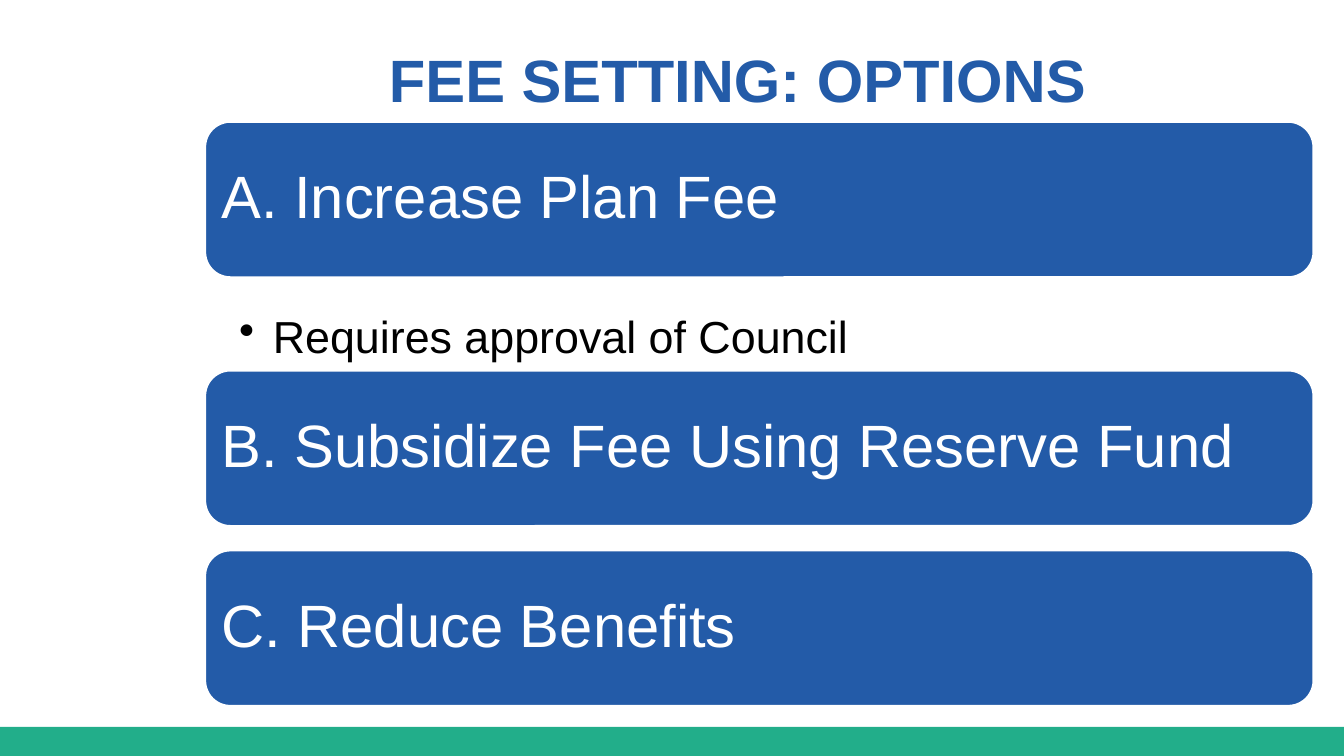
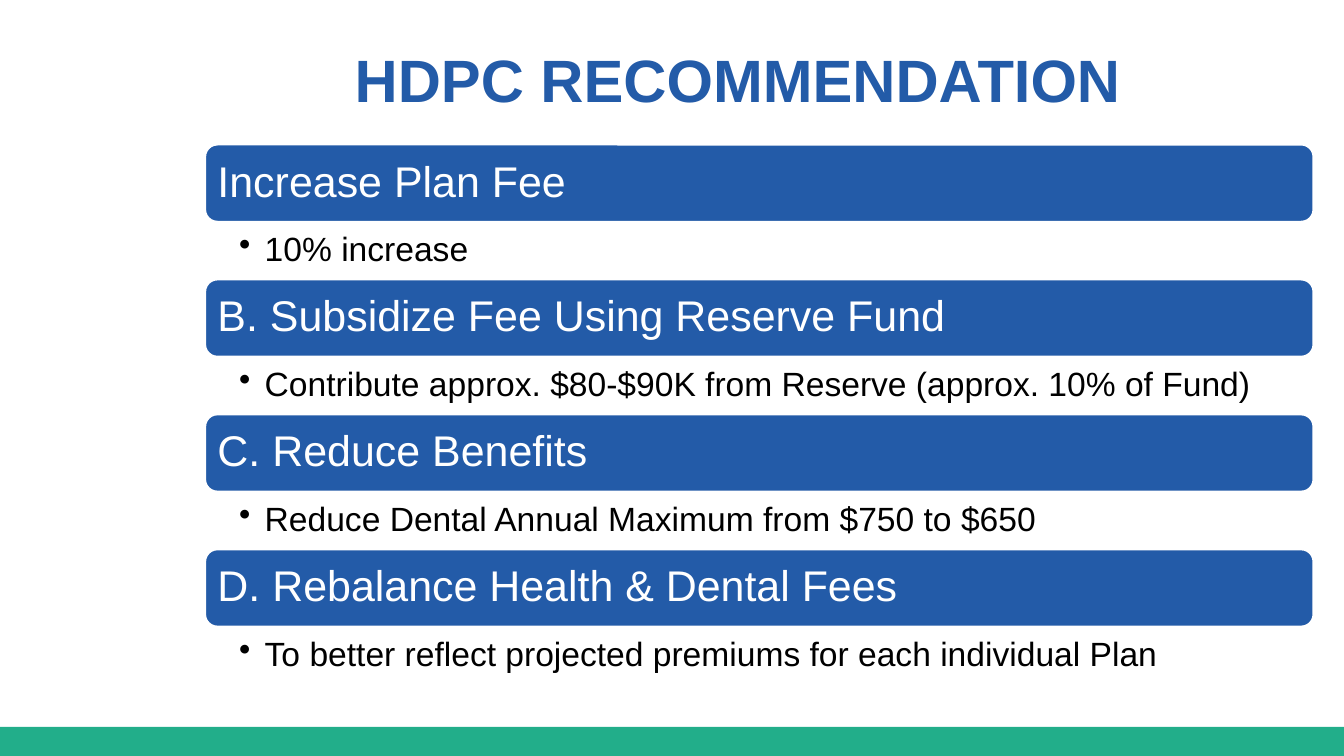
"""Builds two slides on plan fee options and the resulting recommendation."""
import pptx
import pptx.util
import pptx.dml.color
import pptx.enum.shapes
import pptx.enum.text
import pptx.oxml.ns
import lxml.etree

COLORS = {"blue": "235BA8", "green": "22AE8A", "white": "FFFFFF", "black": "000000"}
SHAPE = pptx.enum.shapes.MSO_SHAPE
ANCHOR = pptx.enum.text.MSO_ANCHOR
ALIGN = pptx.enum.text.PP_ALIGN

prs = pptx.Presentation()
prs.slide_width = pptx.util.Inches(10)
prs.slide_height = pptx.util.Inches(5.625)
COL = prs.slide_width / 100
ROW = prs.slide_height / 100


def add_box(s, kind, left, top, width, height, fill=None, line=None):
    """Adds a shape, or a text box if kind is None, on a grid of 100 by 100."""
    at = [int(left * COL), int(top * ROW), int(width * COL), int(height * ROW)]
    if kind is None:
        return s.shapes.add_textbox(*at)
    sp = s.shapes.add_shape(kind, *at)
    sp.shadow.inherit = False
    sp.fill.solid()
    sp.fill.fore_color.rgb = pptx.dml.color.RGBColor.from_string(COLORS[fill])
    if line:
        sp.line.color.rgb = pptx.dml.color.RGBColor.from_string(COLORS[line])
        sp.line.width = pptx.util.Pt(2)
    else:
        sp.line.fill.background()
    return sp


def write(sp, text, color, insets, anchor, spacing, size, bold=False, align=ALIGN.LEFT, indent=0):
    """Writes one paragraph, with a bullet if it has an indent."""
    tf = sp.text_frame
    frame = {"word_wrap": True, "vertical_anchor": anchor}
    sides = ("margin_left", "margin_top", "margin_right", "margin_bottom")
    frame.update(zip(sides, map(pptx.util.Inches, insets)))
    for name, value in frame.items():
        setattr(tf, name, value)
    p = tf.paragraphs[0]
    if indent:
        pPr = p._p.get_or_add_pPr()
        pPr.set("marL", str(pptx.util.Inches(indent)))
        pPr.set("indent", str(-pptx.util.Inches(indent)))
        bullet = lxml.etree.SubElement(pPr, pptx.oxml.ns.qn("a:buChar"))
        bullet.set("char", "•")
    p.alignment = align
    p.line_spacing = spacing
    r = p.add_run()
    r.text = text
    for name, value in {"name": "Arial", "size": pptx.util.Pt(size), "bold": bold}.items():
        setattr(r.font, name, value)
    r.font.color.rgb = pptx.dml.color.RGBColor.from_string(COLORS[color])


slides = [
    {
        "title": "FEE SETTING: OPTIONS",
        "top": 16, "bar": 20.8, "note": 12.1, "gap": 3,
        "bar_size": 32,
        "note_format": {"size": 24, "indent": 0.25, "spacing": 1.5, "anchor": ANCHOR.TOP},
        "items": [
            ("A. Increase Plan Fee", "Requires approval of Council"),
            ("B. Subsidize Fee Using Reserve Fund", None),
            ("C. Reduce Benefits", None),
        ],
    },
    {
        "title": "HDPC RECOMMENDATION",
        "top": 19, "bar": 10.45, "note": 7.4, "gap": 0,
        "bar_size": 23,
        "note_format": {"size": 18, "indent": 0.19, "spacing": 0.9, "anchor": ANCHOR.MIDDLE},
        "items": [
            ("Increase Plan Fee", "10% increase"),
            ("B. Subsidize Fee Using Reserve Fund",
             "Contribute approx. $80-$90K from Reserve (approx. 10% of Fund)"),
            ("C. Reduce Benefits", "Reduce Dental Annual Maximum from $750 to $650"),
            ("D. Rebalance Health & Dental Fees",
             "To better reflect projected premiums for each individual Plan"),
        ],
    },
]

for slide in slides:
    s = prs.slides.add_slide(prs.slide_layouts[6])
    add_box(s, SHAPE.RECTANGLE, 0, 96.15, 100, 3.85, "green")
    sp = add_box(s, None, 9.8, -6.6, 90.2, 21.7)
    write(sp, slide["title"], "blue", [0] * 4, ANCHOR.BOTTOM, 0.8, 32, True, ALIGN.CENTER)
    top = slide["top"]
    for heading, note in slide["items"]:
        sp = add_box(s, SHAPE.ROUNDED_RECTANGLE, 15.2, top, 82.6, slide["bar"], "blue", "white")
        write(sp, heading, "white", [0.07] * 4, ANCHOR.MIDDLE, 0.9, slide["bar_size"])
        top += slide["bar"]
        if note:
            sp = add_box(s, None, 15.2, top, 82.6, slide["note"])
            write(sp, note, "black", [0.26, 0.03, 0.18, 0.03], **slide["note_format"])
            top += slide["note"]
        else:
            top += slide["gap"]

prs.save("out.pptx")
